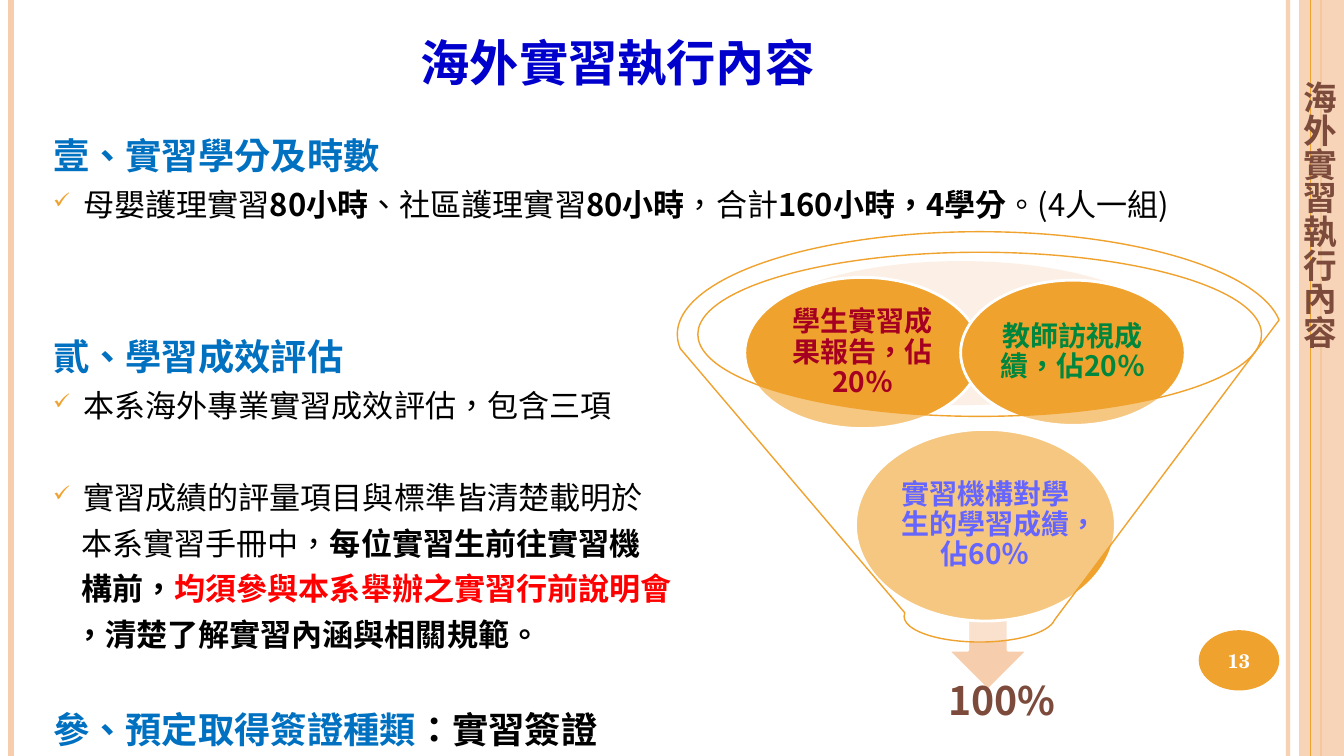
from dataclasses import dataclass

from lxml import etree
from pptx import Presentation
from pptx import util as u
from pptx.dml.color import RGBColor
from pptx.enum import lang, shapes, text
from pptx.oxml.ns import qn


@dataclass(frozen=True)
class Theme:
    sans: str = "Noto Sans CJK SC"
    serif: str = "Times New Roman"
    number_font: str = "TeX Gyre Schola"
    bullet_font: str = "OpenSymbol"
    white: str = "FFFFFF"
    black: str = "000000"
    orange: str = "F0A22E"
    peach: str = "F6CEAD"
    pale: str = "F8D7BE"
    brown: str = "7C4B3B"
    navy: str = "0000CC"
    heading: str = "0070C0"
    red: str = "FF0000"
    blue: str = "0000FF"
    crimson: str = "A50021"
    green: str = "00863D"
    title_size: float = 44
    heading_size: float = 25.9
    body_size: float = 22.2
    total_size: float = 28
    side_size: float = 24
    bubble_size: float = 20
    number_size: float = 14


THEME = Theme()
TITLE = "海外實習執行內容"
PAGE_NUMBER = "13"
TOTAL = "100%"

# kind, space before in points, runs of (words, bold, colour)
BODY = [
    ("heading", 6, [("壹、實習學分及時數", True, THEME.heading)]),
    ("bullet", 6, [("母嬰護理實習", False, THEME.black), ("80小時", True, THEME.black),
                   ("、社區護理實習", False, THEME.black), ("80小時", True, THEME.black),
                   ("，合計", False, THEME.black), ("160小時，4學分", True, THEME.black),
                   ("。(4人一組)", False, THEME.black)]),
    ("heading", 80, [("貳、學習成效評估", True, THEME.heading)]),
    ("bullet", 6, [("本系海外專業實習成效評估，包含三項", False, THEME.black)]),
    ("bullet", 39, [("實習成績的評量項目與標準皆清楚載明於", False, THEME.black)]),
    ("continued", 6, [("本系實習手冊中，", False, THEME.black),
                      ("每位實習生前往實習機", True, THEME.black)]),
    ("continued", 6, [("構前，", True, THEME.black),
                      ("均須參與本系舉辦之實習行前說明會", True, THEME.red)]),
    ("ending", 6, [("，清楚了解實習內涵與相關規範。", True, THEME.black)]),
    ("heading", 39, [("參、預定取得簽證種類", True, THEME.heading),
                     ("：實習簽證", True, THEME.black)]),
]
INDENTS = {"heading": 0, "bullet": 0.76, "continued": 0.71, "ending": 0.53}

# left, top, width, height in cm
BUBBLES = [
    ("實習機構對學生的學習成績，佔60％", THEME.blue, (21.56, 10.82, 6.55, 4.83)),
    ("學生實習成果報告，佔20％", THEME.crimson, (18.77, 6.99, 5.94, 3.81)),
    ("教師訪視成績，佔20％", THEME.green, (24.21, 7.06, 5.66, 3.66)),
]

# x in cm, colour, width in points, opacity in percent
RULES_UNDER_STRIP = [(32.46, THEME.peach, 3, 93), (0.28, THEME.peach, 4.5, 100),
                     (33.3, THEME.orange, 1.5, 100)]
RULES_OVER_STRIP = [(33.02, THEME.orange, 0.75, 100)]

SLIDE_WIDTH, SLIDE_HEIGHT = 33.87, 19.05


def cm(*lengths):
    return [u.Cm(length) for length in lengths]


def apply(target, values):
    for name, value in values.items():
        setattr(target, name, value)


def place(shape, box):
    apply(shape, dict(zip(("left", "top", "width", "height"), cm(*box))))


def set_opacity(properties, percent):
    if percent < 100:
        for color in properties.iter(qn("a:srgbClr")):
            etree.SubElement(color, qn("a:alpha")).set("val", str(percent * 1000))
            return


def add_run(paragraph, words, size, color, font=THEME.sans, bold=True):
    run = paragraph.add_run()
    run.text = words
    apply(run.font, {"size": u.Pt(size), "bold": bold, "name": font,
                     "language_id": lang.MSO_LANGUAGE_ID.TRADITIONAL_CHINESE})
    run.font.color.rgb = RGBColor.from_string(color)
    east_asian = etree.SubElement(run.font._element, qn("a:ea"))
    east_asian.set("typeface", THEME.sans)
    return run


def format_frame(frame, inset, anchor=text.MSO_ANCHOR.MIDDLE, wrap=True):
    margins = {f"margin_{side}": u.Cm(inset) for side in ("left", "top", "right", "bottom")}
    apply(frame, {"word_wrap": wrap, "vertical_anchor": anchor,
                  "auto_size": text.MSO_AUTO_SIZE.NONE, **margins})


def add_label(shape, words, size, color, font=THEME.sans, inset=0.08):
    format_frame(shape.text_frame, inset)
    paragraph = shape.text_frame.paragraphs[0]
    apply(paragraph, {"alignment": text.PP_ALIGN.CENTER, "line_spacing": 0.9})
    add_run(paragraph, words, size, color, font)


def add_shape(parent, kind, box, fill, opacity=100, line=None, line_width=2):
    shape = parent.add_shape(kind, *cm(*box))
    shape.shadow.inherit = False
    shape.fill.solid()
    shape.fill.fore_color.rgb = RGBColor.from_string(fill)
    set_opacity(shape._element.spPr, opacity)
    if line:
        shape.line.color.rgb = RGBColor.from_string(line)
        shape.line.width = u.Pt(line_width)
    else:
        shape.line.fill.background()
    return shape


def add_rules(slide, rules):
    for x, color, width, opacity in rules:
        rule = slide.shapes.add_connector(shapes.MSO_CONNECTOR.STRAIGHT,
                                          *cm(x, 0, x, SLIDE_HEIGHT))
        rule.line.color.rgb = RGBColor.from_string(color)
        rule.line.width = u.Pt(width)
        properties = rule._element.spPr
        set_opacity(properties, opacity)
        etree.SubElement(properties, qn("a:effectLst"))


def add_frame(slide):
    """Draw the vertical rules, the side strip with its label and the page number."""
    add_rules(slide, RULES_UNDER_STRIP)
    strip_left = 32.74
    add_shape(slide.shapes, shapes.MSO_SHAPE.RECTANGLE,
              (strip_left, 0, SLIDE_WIDTH - strip_left, SLIDE_HEIGHT), THEME.peach, 87)
    add_rules(slide, RULES_OVER_STRIP)
    badge = add_shape(slide.shapes, shapes.MSO_SHAPE.OVAL, (30.21, 15.88, 2.03, 1.52),
                      THEME.orange)
    add_label(badge, PAGE_NUMBER, THEME.number_size, THEME.white, THEME.number_font)
    badge.text_frame.paragraphs[0].line_spacing = 1.0
    side_label = slide.shapes.add_textbox(*cm(32.4, 1.83, 1.55, 7.09))
    format_frame(side_label.text_frame, 0.2, text.MSO_ANCHOR.TOP, wrap=False)
    side_label.text_frame._txBody.bodyPr.set("vert", "eaVert")
    add_run(side_label.text_frame.paragraphs[0], TITLE, THEME.side_size, THEME.brown,
            THEME.serif)


def fill_title(title):
    place(title, (1.73, -0.69, 27.66, 3.18))
    format_frame(title.text_frame, 0.13, text.MSO_ANCHOR.BOTTOM)
    paragraph = title.text_frame.paragraphs[0]
    paragraph.alignment = text.PP_ALIGN.CENTER
    run = add_run(paragraph, TITLE, THEME.title_size, THEME.navy, THEME.serif)
    run.font._element.set("cap", "small")


def format_bullet(paragraph, kind):
    indent = u.Cm(INDENTS[kind])
    properties = paragraph._p.get_or_add_pPr()
    properties.set("marL", str(indent))
    properties.set("indent", str(-indent if kind == "bullet" else 0))
    if kind != "bullet":
        etree.SubElement(properties, qn("a:buNone"))
        return
    color = etree.SubElement(properties, qn("a:buClr"))
    etree.SubElement(color, qn("a:srgbClr")).set("val", THEME.orange)
    for tag, name, value in (("a:buSzPct", "val", "70000"),
                             ("a:buFont", "typeface", THEME.bullet_font),
                             ("a:buChar", "char", "✓")):
        etree.SubElement(properties, qn(tag)).set(name, value)


def fill_body(body):
    place(body, (1.09, 3.23, 30.91, 15.54))
    frame = body.text_frame
    format_frame(frame, 0.13, text.MSO_ANCHOR.TOP)
    apply(frame, {"margin_left": u.Cm(0.25), "margin_right": u.Cm(0.25)})
    for index, (kind, gap, runs) in enumerate(BODY):
        paragraph = frame.add_paragraph() if index else frame.paragraphs[0]
        apply(paragraph, {"alignment": text.PP_ALIGN.LEFT, "line_spacing": 1.0,
                          "space_before": u.Pt(gap)})
        format_bullet(paragraph, kind)
        size = THEME.heading_size if kind == "heading" else THEME.body_size
        for words, bold, color in runs:
            add_run(paragraph, words, size, color, bold=bold)


def add_funnel(slide):
    parts = slide.shapes.add_group_shape().shapes
    add_shape(parts, shapes.MSO_SHAPE.OVAL, (19, 6.58, 10.44, 3.63), THEME.pale, 40)
    add_shape(parts, shapes.MSO_SHAPE.DOWN_ARROW, (23.88, 15.29, 2.03, 2.11),
              THEME.peach, line=THEME.white)
    total = parts.add_textbox(*cm(19.25, 16.56, 11.99, 2.29))
    add_label(total, TOTAL, THEME.total_size, THEME.brown, inset=0.56)
    for words, color, box in BUBBLES:
        bubble = add_shape(parts, shapes.MSO_SHAPE.OVAL, box, THEME.orange, line=THEME.white)
        add_label(bubble, words, THEME.bubble_size, color)
    add_shape(parts, shapes.MSO_SHAPE.FUNNEL, (17.07, 5.84, 15.24, 10.34), THEME.white, 40,
              THEME.orange, 1)


def main():
    presentation = Presentation()
    apply(presentation, {"slide_width": u.Cm(SLIDE_WIDTH), "slide_height": u.Cm(SLIDE_HEIGHT)})
    slide = presentation.slides.add_slide(presentation.slide_layouts[1])
    fill_title(slide.shapes.title)
    fill_body(slide.placeholders[1])
    add_frame(slide)
    add_funnel(slide)
    presentation.save("out.pptx")


if __name__ == "__main__":
    main()
